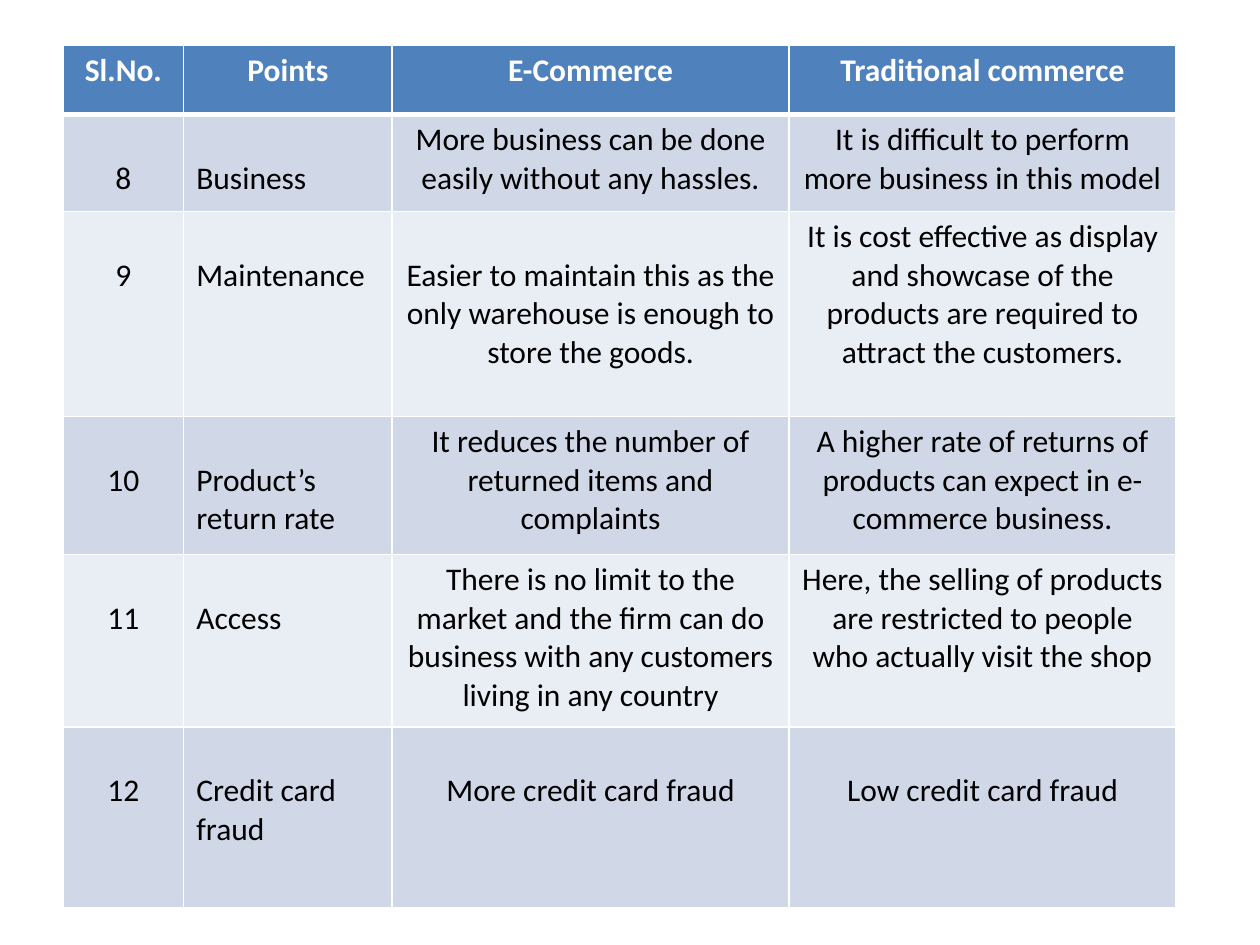
from dataclasses import dataclass

from lxml.etree import SubElement
from pptx import Presentation
from pptx.dml.color import RGBColor
from pptx.enum.text import PP_ALIGN
from pptx.oxml.ns import qn
from pptx.util import Pt


@dataclass(frozen=True)
class Theme:
    font: str = "Calibri"
    size: float = 18
    pad: float = 3.6
    line: float = 22
    head: str = "4F81BD"
    bands: tuple = ("D0D8E8", "E9EDF4")
    white: str = "FFFFFF"
    black: str = "000000"
    thin: float = 1
    thick: float = 3


@dataclass(frozen=True)
class Row:
    height: float
    texts: tuple
    lowered: tuple = ()  # columns whose text starts one line down


THEME = Theme()
LEFT, TOP = 36, 26
WIDTHS = (69, 119, 227, 221)
ROWS = (
    Row(39.5, ("Sl.No.", "Points", "E-Commerce", "Traditional commerce")),
    Row(55.5, ("8", "Business",
               "More business can be done easily without any hassles.",
               "It is difficult to perform more business in this model"), (0, 1)),
    Row(117, ("9", "Maintenance",
              "Easier to maintain this as the only warehouse is enough to store the goods.",
              "It is cost effective as display and showcase of the products are "
              "required to attract the customers."), (0, 1, 2)),
    Row(79, ("10", "Product’s return rate",
             "It reduces the number of returned items and complaints",
             "A higher rate of returns of products can expect in e-commerce business."),
        (0, 1)),
    Row(98.5, ("11", "Access",
               "There is no limit to the market and the firm can do business with "
               "any customers living in any country",
               "Here, the selling of products are restricted to people who actually "
               "visit the shop"), (0, 1)),
    Row(103.5, ("12", "Credit card fraud", "More credit card fraud",
                "Low credit card fraud"), (0, 1, 2, 3)),
)


def set_all(item, values: dict) -> None:
    for name, value in values.items():
        setattr(item, name, value)


def add_edges(cell, widths: dict) -> None:
    """Draw white cell borders; must run before the cell is filled."""
    props = cell._tc.get_or_add_tcPr()
    for side, width in widths.items():
        edge = SubElement(props, qn(f"a:ln{side}"), w=str(Pt(width)))
        fill = SubElement(edge, qn("a:solidFill"))
        SubElement(fill, qn("a:srgbClr"), val=THEME.white)


def fill_cell(cell, row: Row, r: int, c: int) -> None:
    head = r == 0
    add_edges(cell, {"L": THEME.thin, "R": THEME.thin,
                     "T": THEME.thick if r == 1 else THEME.thin,
                     "B": THEME.thick if head else THEME.thin})
    cell.fill.solid()
    shade = THEME.head if head else THEME.bands[(r - 1) % 2]
    cell.fill.fore_color.rgb = RGBColor.from_string(shade)
    drop = THEME.line if c in row.lowered else 0
    set_all(cell, {"text": row.texts[c], "margin_top": Pt(THEME.pad + drop),
                   "margin_bottom": Pt(THEME.pad)})
    para = cell.text_frame.paragraphs[0]
    para.alignment = PP_ALIGN.LEFT if c == 1 and not head else PP_ALIGN.CENTER
    font = para.runs[0].font
    set_all(font, {"name": THEME.font, "size": Pt(THEME.size), "bold": head})
    font.color.rgb = RGBColor.from_string(THEME.white if head else THEME.black)


def add_grid(slide) -> None:
    total = sum(row.height for row in ROWS)
    table = slide.shapes.add_table(
        len(ROWS), len(WIDTHS), Pt(LEFT), Pt(TOP), Pt(sum(WIDTHS)), Pt(total)).table
    for col, width in zip(table.columns, WIDTHS):
        col.width = Pt(width)
    for r, row in enumerate(ROWS):
        table.rows[r].height = Pt(row.height)
        for c in range(len(WIDTHS)):
            fill_cell(table.cell(r, c), row, r, c)


def main() -> None:
    deck = Presentation()
    set_all(deck, {"slide_width": Pt(720), "slide_height": Pt(540)})
    add_grid(deck.slides.add_slide(deck.slide_layouts[6]))
    deck.save("out.pptx")


if __name__ == "__main__":
    main()
